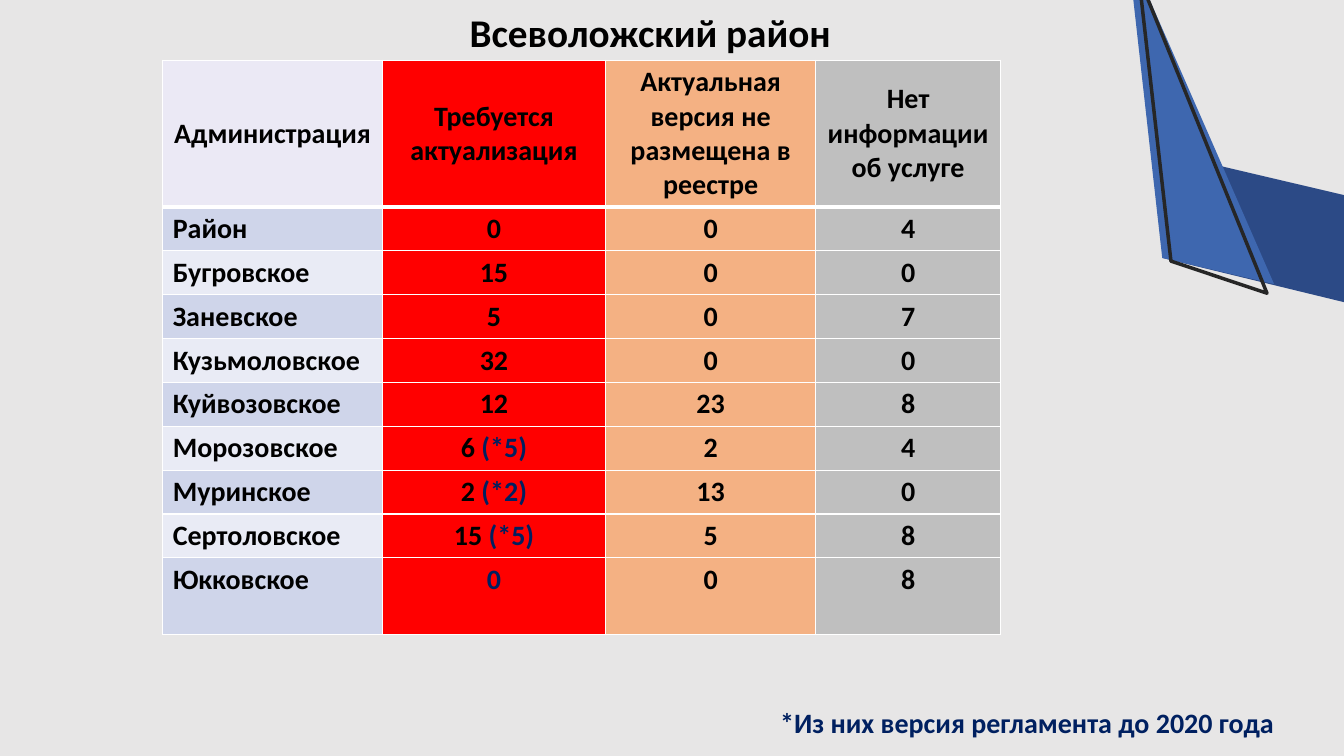
import dataclasses

import pptx
import pptx.dml.color
import pptx.enum.text
import pptx.oxml
import pptx.oxml.ns
import pptx.util

Cm = pptx.util.Cm
Pt = pptx.util.Pt
ALIGN = pptx.enum.text.PP_ALIGN
ANCHOR = pptx.enum.text.MSO_ANCHOR

COLORS = {
    "background": "E7E6E6",
    "ribbon": "2C4A86",
    "blade": "3E67AF",
    "outline": "262626",
    "text": "000000",
    "note": "002060",
    "border": "FFFFFF",
    "corner": "EBE9F5",
    "odd": "CFD5EA",
    "even": "E9EBF5",
    "outdated": "FF0000",
    "unpublished": "F4B183",
    "unknown": "BFBFBF",
}
FONT = "Calibri"


@dataclasses.dataclass
class Ornament:
    points: list[tuple[float, float]]
    fill: str | None = None
    line: str | None = None


@dataclasses.dataclass
class Column:
    header: str
    width: float
    fill: str


@dataclasses.dataclass
class Run:
    text: str
    color: str = "text"


@dataclasses.dataclass
class Caption:
    text: str
    left: float
    top: float
    width: float
    height: float
    size: float
    color: str
    align: ALIGN
    wrap: bool


ORNAMENTS = [
    Ornament([(37.16, 5.69), (30.78, 4.19), (29.29, 6.5), (36.4, 8.23)], fill="ribbon"),
    Ornament([(29.29, 6.5), (28.42, -1.27), (32.11, 7.16)], fill="blade"),
    Ornament([(29.51, 6.58), (28.7, -0.58), (31.93, 7.39)], line="outline"),
]
COLUMNS = [
    Column("Администрация", 5.54, "corner"),
    Column("Требуется актуализация", 5.62, "outdated"),
    Column("Актуальная версия не размещена в реестре", 5.3, "unpublished"),
    Column("Нет информации об услуге", 4.65, "unknown"),
]
ADMINISTRATIONS = [
    ("Район", [Run("0")], "0", "4"),
    ("Бугровское", [Run("15")], "0", "0"),
    ("Заневское", [Run("5")], "0", "7"),
    ("Кузьмоловское", [Run("32")], "0", "0"),
    ("Куйвозовское", [Run("12")], "23", "8"),
    ("Морозовское", [Run("6 "), Run("(*5)", "note")], "2", "4"),
    ("Муринское", [Run("2 "), Run("(*2)", "note")], "13", "0"),
    ("Сертоловское", [Run("15 "), Run("(*5)", "note")], "5", "8"),
    ("Юкковское", [Run("0", "note")], "0", "8"),
]
HEADER_HEIGHT, ROW_HEIGHT, LAST_HEIGHT = 3.66, 1.1, 1.94
CAPTIONS = [
    Caption("Всеволожский район", 11.43, 0.08, 9.91, 1.45, 28, "text", ALIGN.CENTER, False),
    Caption("*Из них версия регламента до 2020 года", 19.41, 17.65, 14.12, 1.12,
            20, "note", ALIGN.LEFT, True),
]


def rgb(name: str) -> pptx.dml.color.RGBColor:
    return pptx.dml.color.RGBColor.from_string(COLORS[name])


def write_runs(paragraph, runs: list[Run], size: float, align: ALIGN) -> None:
    paragraph.alignment = align
    for item in runs:
        run = paragraph.add_run()
        run.text = item.text
        run.font.name = FONT
        run.font.size = Pt(size)
        run.font.bold = True
        run.font.color.rgb = rgb(item.color)


def draw_ornament(slide, ornament: Ornament) -> None:
    corners = [(Cm(x), Cm(y)) for x, y in ornament.points]
    builder = slide.shapes.build_freeform(*corners[0], scale=1.0)
    builder.add_line_segments(corners[1:], close=True)
    shape = builder.convert_to_shape()
    shape.shadow.inherit = False
    if ornament.fill:
        shape.fill.solid()
        shape.fill.fore_color.rgb = rgb(ornament.fill)
    else:
        shape.fill.background()
    if ornament.line:
        shape.line.color.rgb = rgb(ornament.line)
        shape.line.width = Pt(2.5)
    else:
        shape.line.fill.background()


def set_borders(cell, widths: dict[str, float]) -> None:
    properties = cell._tc.get_or_add_tcPr()
    for side, width in widths.items():
        properties.append(pptx.oxml.parse_xml(
            f'<a:ln{side} {pptx.oxml.ns.nsdecls("a")} w="{Pt(width)}"><a:solidFill>'
            f'<a:srgbClr val="{COLORS["border"]}"/></a:solidFill></a:ln{side}>'
        ))


def fill_cell(cell, runs: list[Run], fill: str, row: int, align: ALIGN) -> None:
    is_header = row == 0
    set_borders(cell, {"L": 1, "R": 1, "T": 3 if row == 1 else 1, "B": 3 if is_header else 1})
    cell.fill.solid()
    cell.fill.fore_color.rgb = rgb(fill)
    cell.vertical_anchor = ANCHOR.MIDDLE if is_header else ANCHOR.TOP
    cell.margin_top = cell.margin_bottom = Cm(0.12)
    write_runs(cell.text_frame.paragraphs[0], runs, 20, align)


def draw_table(slide) -> None:
    heights = [HEADER_HEIGHT] + [ROW_HEIGHT] * (len(ADMINISTRATIONS) - 1) + [LAST_HEIGHT]
    width = sum(column.width for column in COLUMNS)
    table = slide.shapes.add_table(
        len(heights), len(COLUMNS), Cm(4.1), Cm(1.52), Cm(width), Cm(sum(heights))
    ).table
    for row, height in enumerate(heights):
        table.rows[row].height = Cm(height)
    for index, column in enumerate(COLUMNS):
        table.columns[index].width = Cm(column.width)
        fill_cell(table.cell(0, index), [Run(column.header)], column.fill, 0, ALIGN.CENTER)
    for row, (name, outdated, unpublished, unknown) in enumerate(ADMINISTRATIONS, 1):
        band = "odd" if row % 2 else "even"
        fill_cell(table.cell(row, 0), [Run(name)], band, row, ALIGN.LEFT)
        counts = [outdated, [Run(unpublished)], [Run(unknown)]]
        for index, runs in enumerate(counts, 1):
            fill_cell(table.cell(row, index), runs, COLUMNS[index].fill, row, ALIGN.CENTER)


def draw_caption(slide, caption: Caption) -> None:
    frame = slide.shapes.add_textbox(
        Cm(caption.left), Cm(caption.top), Cm(caption.width), Cm(caption.height)
    ).text_frame
    frame.word_wrap = caption.wrap
    frame.auto_size = pptx.enum.text.MSO_AUTO_SIZE.SHAPE_TO_FIT_TEXT
    write_runs(frame.paragraphs[0], [Run(caption.text, caption.color)],
               caption.size, caption.align)


def main() -> None:
    presentation = pptx.Presentation()
    presentation.slide_width = Cm(33.87)
    presentation.slide_height = Cm(19.05)
    slide = presentation.slides.add_slide(presentation.slide_layouts[6])
    slide.background.fill.solid()
    slide.background.fill.fore_color.rgb = rgb("background")
    for ornament in ORNAMENTS:
        draw_ornament(slide, ornament)
    draw_table(slide)
    for caption in CAPTIONS:
        draw_caption(slide, caption)
    presentation.save("out.pptx")


if __name__ == "__main__":
    main()
